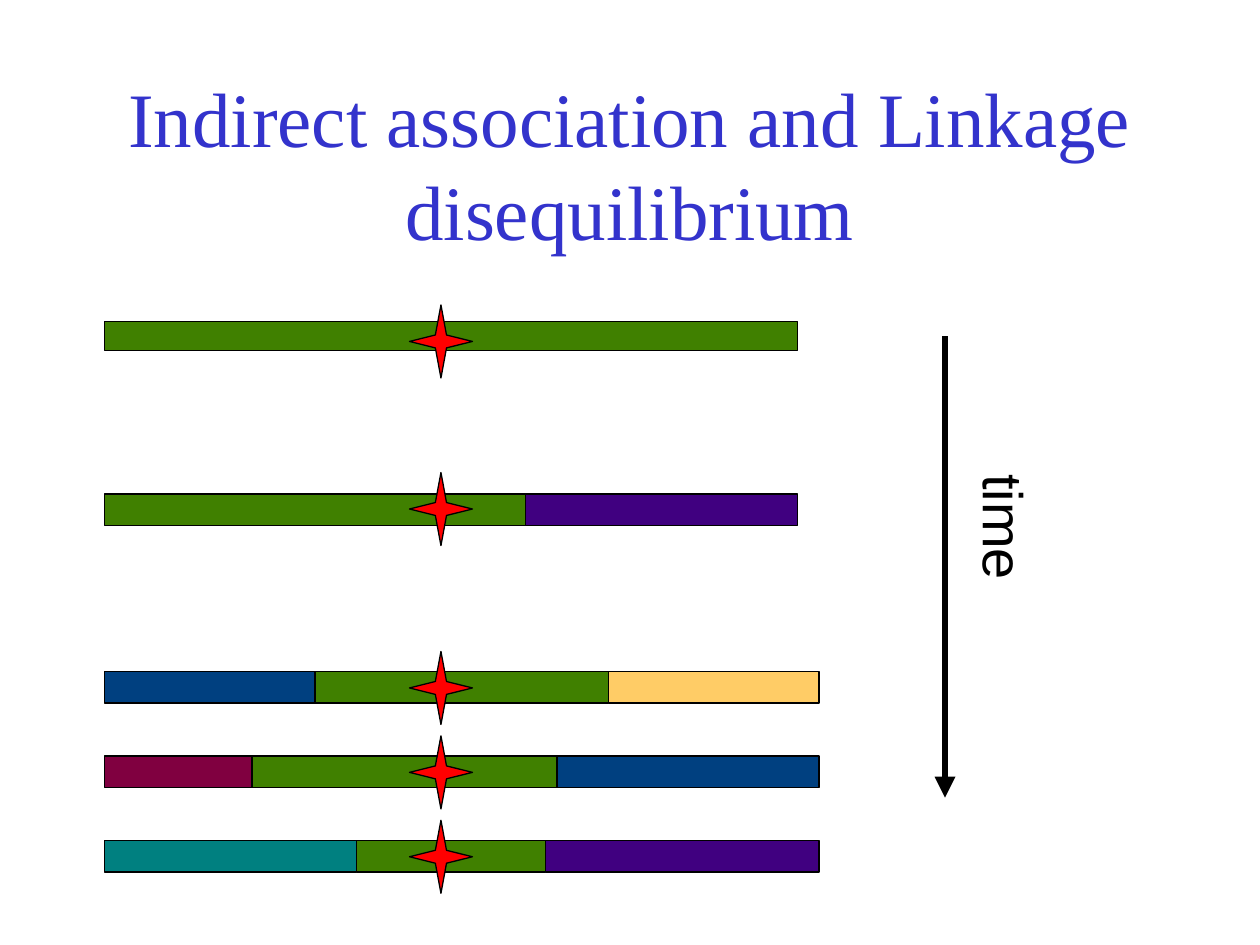
from dataclasses import dataclass
from itertools import pairwise

from lxml.etree import SubElement
from pptx import Presentation
from pptx.dml.color import RGBColor
from pptx.enum.shapes import MSO_CONNECTOR, MSO_SHAPE
from pptx.enum.text import MSO_ANCHOR, PP_ALIGN
from pptx.oxml.ns import qn
from pptx.util import Inches, Pt


@dataclass(frozen=True)
class Theme:
    title: str = "3333CC"
    ink: str = "000000"
    star: str = "FF0000"
    green: str = "408000"
    purple: str = "400080"
    blue: str = "004080"
    gold: str = "FFCC66"
    maroon: str = "800040"
    teal: str = "008080"
    title_font: str = "Times New Roman"
    label_font: str = "Arial"
    title_size: int = 44
    label_size: int = 32
    outline: float = 0.75
    arrow: int = 4


THEME = Theme()
BAR_LEFT = 0.83
STAR_LEFT, STAR_WIDTH, STAR_HEIGHT = 3.25, 0.5, 0.58


def add_text(shapes, text, box, font, size, color, align, anchor, wrap):
    sp = shapes.add_textbox(*map(Inches, box))
    tf = sp.text_frame
    tf.word_wrap = wrap
    tf.vertical_anchor = anchor
    p = tf.paragraphs[0]
    p.text = text
    p.alignment = align
    p.font.name = font
    p.font.size = Pt(size)
    p.font.color.rgb = RGBColor.from_string(color)
    return sp


def add_outlined(shapes, kind, box, fill):
    sp = shapes.add_shape(kind, *map(Inches, box))
    sp.shadow.inherit = False
    sp.fill.solid()
    sp.fill.fore_color.rgb = RGBColor.from_string(fill)
    sp.line.color.rgb = RGBColor.from_string(THEME.ink)
    sp.line.width = Pt(THEME.outline)
    return sp


def add_chromosome(shapes, top, height, star_top, ends, colors):
    for (left, right), color in zip(pairwise([BAR_LEFT, *ends]), colors):
        add_outlined(shapes, MSO_SHAPE.RECTANGLE,
                     (left, top, right - left, height), color)
    star = add_outlined(shapes, MSO_SHAPE.STAR_4_POINT,
                        (STAR_LEFT, star_top, STAR_WIDTH, STAR_HEIGHT), THEME.star)
    star.adjustments[0] = 0.125


def add_arrow(shapes, start, end):
    line = shapes.add_connector(MSO_CONNECTOR.STRAIGHT, *map(Inches, (*start, *end)))
    line.line.color.rgb = RGBColor.from_string(THEME.ink)
    line.line.width = Pt(THEME.arrow)
    SubElement(line.line._get_or_add_ln(), qn("a:tailEnd"), type="triangle")
    SubElement(line._element.spPr, qn("a:effectLst"))


def main():
    prs = Presentation()
    prs.slide_width, prs.slide_height = Inches(10), Inches(7.5)
    s = prs.slides.add_slide(prs.slide_layouts[6])
    t = THEME

    add_text(s.shapes, "Indirect association and Linkage disequilibrium",
             (0.75, 0.67, 8.5, 1.25), t.title_font, t.title_size, t.title,
             PP_ALIGN.CENTER, MSO_ANCHOR.MIDDLE, True)

    add_chromosome(s.shapes, 2.55, 0.23, 2.42, [6.33], [t.green])
    add_arrow(s.shapes, (7.5, 2.67), (7.5, 6.33))
    label = add_text(s.shapes, "time", (7.43, 3.9, 1.1, 0.63), t.label_font,
                     t.label_size, t.ink, PP_ALIGN.LEFT, MSO_ANCHOR.TOP, False)
    label.rotation = 90

    second = s.shapes.add_group_shape().shapes
    add_chromosome(second, 3.92, 0.25, 3.75, [4.17, 6.33], [t.green, t.purple])

    descendants = [
        ([2.5, 4.83, 6.5], [t.blue, t.green, t.gold]),
        ([2.0, 4.42, 6.5], [t.maroon, t.green, t.blue]),
        ([2.83, 4.33, 6.5], [t.teal, t.green, t.purple]),
    ]
    latest = s.shapes.add_group_shape().shapes
    for i, (ends, colors) in enumerate(descendants):
        top = 5.33 + i * 0.67
        add_chromosome(latest, top, 0.25, top - 0.16, ends, colors)

    prs.save("out.pptx")


if __name__ == "__main__":
    main()
